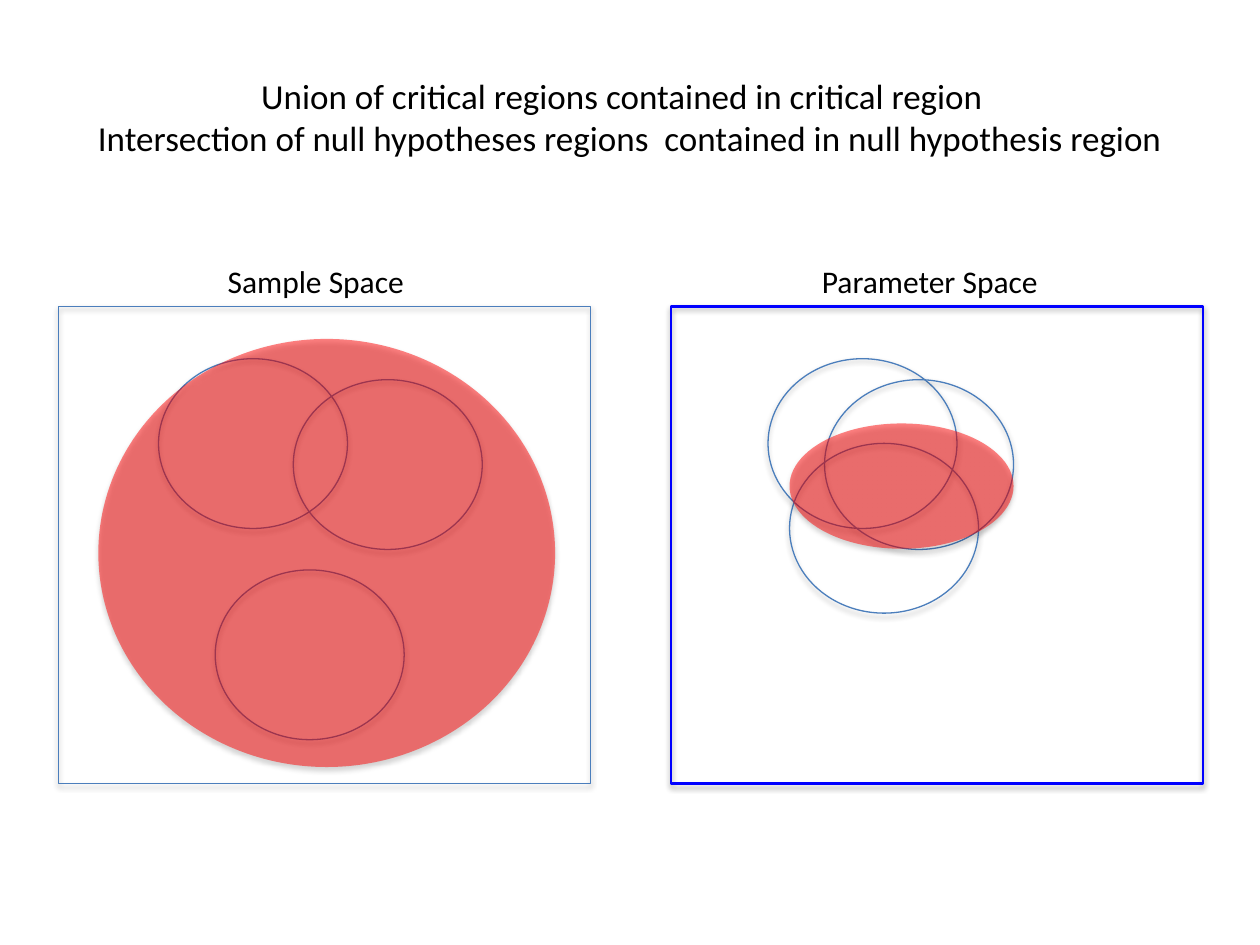
from lxml import etree
from pptx import Presentation
from pptx.dml.color import RGBColor
from pptx.enum.shapes import MSO_SHAPE
from pptx.enum.text import MSO_ANCHOR, MSO_AUTO_SIZE, PP_ALIGN
from pptx.oxml.ns import qn
from pptx.util import Pt

OVAL, RECT = MSO_SHAPE.OVAL, MSO_SHAPE.RECTANGLE
MIDDLE, CENTER = MSO_ANCHOR.MIDDLE, PP_ALIGN.CENTER
GROW = MSO_AUTO_SIZE.SHAPE_TO_FIT_TEXT
BLACK = RGBColor(0x00, 0x00, 0x00)
STEEL = RGBColor(0x4B, 0x7E, 0xBC)
BLUE = RGBColor(0x00, 0x00, 0xFF)
RED = RGBColor(0xFF, 0x00, 0x00)

deck = Presentation()
deck.slide_width, deck.slide_height = Pt(720), Pt(540)
slide = deck.slides.add_slide(deck.slide_layouts[5])


def add_shape(kind, left, top, width, height, line=None, weight=0.75):
    shape = slide.shapes.add_shape(kind, Pt(left), Pt(top), Pt(width), Pt(height))
    if line is None:
        shape.line.fill.background()
        shape.fill.solid()
        shape.fill.fore_color.rgb = RED
        tint = shape.fill._xPr.find(qn("a:solidFill"))[0]
        etree.SubElement(tint, qn("a:alpha"), val="49000")
    else:
        shape.fill.background()
        shape.line.color.rgb = line
        shape.line.width = Pt(weight)
    shape.shadow.inherit = False
    effect = shape._element.spPr.find(qn("a:effectLst"))
    shade = etree.SubElement(effect, qn("a:outerShdw"), blurRad=str(Pt(3.1)),
                             dist=str(Pt(1.8)), dir="5400000", rotWithShape="0")
    color = etree.SubElement(shade, qn("a:srgbClr"), val=str(BLACK))
    etree.SubElement(color, qn("a:alpha"), val="35000")


def style(frame, size):
    for para in frame.paragraphs:
        for run in para.runs:
            run.font.name = "Calibri"
            run.font.size = Pt(size)
            run.font.color.rgb = BLACK


title = slide.shapes.title
title.left, title.top, title.width, title.height = Pt(36), Pt(21.6), Pt(648), Pt(90)
frame = title.text_frame
frame.text = ("Union of critical regions contained in critical region  \v"
              "Intersection of null hypotheses regions  contained in null hypothesis region")
frame.vertical_anchor = MIDDLE
frame.paragraphs[0].alignment = CENTER
style(frame, 20)

rings = [(90.6, 205), (167.6, 217), (123, 325.7),
         (438.9, 205), (471.2, 217), (451.2, 253.4)]
for left, top in rings:
    add_shape(OVAL, left, top, 108, 97, STEEL)

spaces = [("Sample Space", 33.6, STEEL, 0.75, 123, 117),
          ("Parameter Space", 383.5, BLUE, 1.5, 462.6, 139)]
for name, left, color, weight, start, width in spaces:
    add_shape(RECT, left, 175, 304, 272.7, color, weight)
    box = slide.shapes.add_textbox(Pt(start), Pt(146), Pt(width), Pt(29))
    frame = box.text_frame
    frame.text = name
    frame.word_wrap = False
    frame.auto_size = GROW
    style(frame, 18)

add_shape(OVAL, 56.2, 193.7, 261, 244.6)
add_shape(OVAL, 451.2, 242, 128, 71.6)

deck.save("out.pptx")
